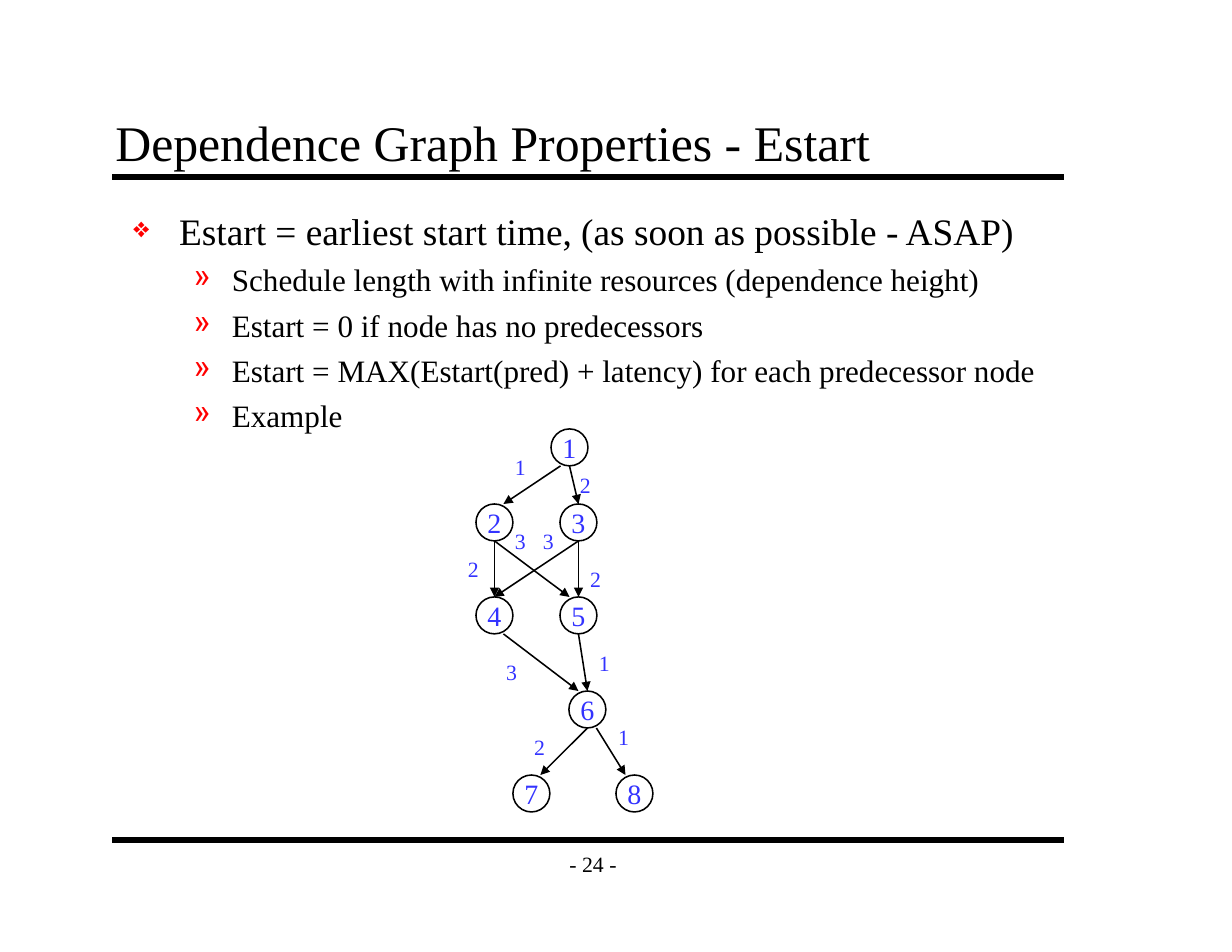
from lxml import etree
from pptx import Presentation
from pptx.dml.color import RGBColor
from pptx.enum.shapes import MSO_CONNECTOR, MSO_SHAPE
from pptx.enum.text import MSO_ANCHOR, PP_ALIGN
from pptx.oxml.ns import qn
from pptx.util import Inches, Pt

STRAIGHT = MSO_CONNECTOR.STRAIGHT
OVAL = MSO_SHAPE.OVAL
TOP, MIDDLE, BOTTOM = MSO_ANCHOR.TOP, MSO_ANCHOR.MIDDLE, MSO_ANCHOR.BOTTOM
LEFT, CENTER = PP_ALIGN.LEFT, PP_ALIGN.CENTER

BLACK = RGBColor(0x00, 0x00, 0x00)
RED = RGBColor(0xFF, 0x00, 0x00)
BLUE = RGBColor(0x33, 0x33, 0xFF)
FONT = "Times New Roman"

DIAMETER = 0.33
NODES = {
    "1": (4.92, 3.83),
    "2": (4.25, 4.5),
    "3": (5, 4.5),
    "4": (4.25, 5.33),
    "5": (5, 5.33),
    "6": (5.08, 6.17),
    "7": (4.58, 6.92),
    "8": (5.5, 6.92),
}
# source, target, start shift, end shift, latency, label position
SHIFT = 0.08
EDGES = [
    ("1", "2", -SHIFT, SHIFT, "1", (4.5, 4)),
    ("1", "3", 0, 0, "2", (5.08, 4.16)),
    ("2", "5", 0, -SHIFT, "3", (4.5, 4.66)),
    ("3", "4", 0, 0, "3", (4.75, 4.66)),
    ("3", "5", 0, 0, "2", (5.17, 5)),
    ("2", "4", 0, 0, "2", (4.08, 4.91)),
    ("4", "6", SHIFT, -SHIFT, "3", (4.42, 5.83)),
    ("5", "6", 0, 0, "1", (5.25, 5.75)),
    ("6", "8", SHIFT, -SHIFT, "1", (5.42, 6.41)),
    ("6", "7", 0, SHIFT, "2", (4.67, 6.5)),
]
BULLETS = [
    (0, "Estart = earliest start time, (as soon as possible - ASAP)"),
    (1, "Schedule length with infinite resources (dependence height)"),
    (1, "Estart = 0 if node has no predecessors"),
    (1, "Estart = MAX(Estart(pred) + latency) for each predecessor node"),
    (1, "Example"),
]
# size, text indent, hanging indent, bullet, bullet percentage
LEVELS = [(24, 0.41, 0.41, "❖", 75), (20, 0.88, 0.34, "»", 100)]


def style_paragraph(paragraph, text, size, color=BLACK, align=LEFT):
    """Write the text of a paragraph and set its font."""
    paragraph.text = text
    paragraph.alignment = align
    paragraph.font.name = FONT
    paragraph.font.size = Pt(size)
    paragraph.font.color.rgb = color


def add_text_box(slide, box, anchor=TOP, insets=(0.11, 0.06), wrap=True):
    """Add an empty text box and return its text frame."""
    frame = slide.shapes.add_textbox(*map(Inches, box)).text_frame
    frame.word_wrap = wrap
    frame.vertical_anchor = anchor
    frame.margin_left = frame.margin_right = Inches(insets[0])
    frame.margin_top = frame.margin_bottom = Inches(insets[1])
    return frame


def add_line(slide, start, end, width, arrow=False):
    """Draw a straight black line, with an arrowhead at its end if asked."""
    line = slide.shapes.add_connector(STRAIGHT, *map(Inches, (*start, *end)))
    line.line.color.rgb = BLACK
    line.line.width = Pt(width)
    if arrow:
        etree.SubElement(line.line._get_or_add_ln(), qn("a:tailEnd"), type="triangle")
    etree.SubElement(line._element.spPr, qn("a:effectLst"))


def add_bullet(paragraph, level, text):
    """Fill a paragraph as a red-bulleted item of the given level."""
    size, indent, hanging, character, percentage = LEVELS[level]
    style_paragraph(paragraph, text, size)
    paragraph.level = level
    paragraph.space_before = Pt(5)
    properties = paragraph._p.get_or_add_pPr()
    properties.set("marL", str(Inches(indent)))
    properties.set("indent", str(-Inches(hanging)))
    color = etree.Element(qn("a:buClr"))
    etree.SubElement(color, qn("a:srgbClr"), val=str(RED))
    bullet_size = etree.Element(qn("a:buSzPct"), val=str(percentage * 1000))
    bullet = etree.Element(qn("a:buChar"), char=character)
    defaults = properties.find(qn("a:defRPr"))
    for element in (color, bullet_size, bullet):
        defaults.addprevious(element)


def add_node(slide, name, position):
    """Draw a numbered circle of the graph."""
    shape = slide.shapes.add_shape(OVAL, *map(Inches, (*position, DIAMETER, DIAMETER)))
    shape.shadow.inherit = False
    shape.fill.background()
    shape.line.color.rgb = BLACK
    shape.line.width = Pt(1)
    frame = shape.text_frame
    frame.word_wrap = False
    frame.vertical_anchor = MIDDLE
    style_paragraph(frame.paragraphs[0], name, 18, BLUE, CENTER)


def add_edge(slide, source, target, start_shift, end_shift, latency, label):
    """Draw an arrow from the foot of one node to the head of another, with its latency."""
    (start_x, start_y), (end_x, end_y) = NODES[source], NODES[target]
    radius = DIAMETER / 2
    start = (start_x + radius + start_shift, start_y + DIAMETER)
    add_line(slide, start, (end_x + radius + end_shift, end_y), 1, arrow=True)
    frame = add_text_box(slide, (*label, 0.3, 0.33), insets=(0.1, 0.05), wrap=False)
    style_paragraph(frame.paragraphs[0], latency, 14, BLUE)


def main():
    """Build the slide and save it."""
    presentation = Presentation()
    presentation.slide_width, presentation.slide_height = Inches(11), Inches(8.5)
    slide = presentation.slides.add_slide(presentation.slide_layouts[6])

    for y in (1.58, 7.5):
        add_line(slide, (1, y), (9.5, y), 4)
    page = add_text_box(slide, (4.92, 7.5, 0.75, 0.42), MIDDLE, wrap=False)
    style_paragraph(page.paragraphs[0], "- 24 -", 14, align=CENTER)
    title = add_text_box(slide, (0.92, 0.92, 8.5, 0.67), BOTTOM)
    style_paragraph(title.paragraphs[0], "Dependence Graph Properties - Estart", 32)

    body = add_text_box(slide, (1.08, 1.8, 8.42, 5.7))
    for index, (level, text) in enumerate(BULLETS):
        paragraph = body.add_paragraph() if index else body.paragraphs[0]
        add_bullet(paragraph, level, text)

    for name, position in NODES.items():
        add_node(slide, name, position)
    for edge in EDGES:
        add_edge(slide, *edge)
    presentation.save("out.pptx")


if __name__ == "__main__":
    main()
